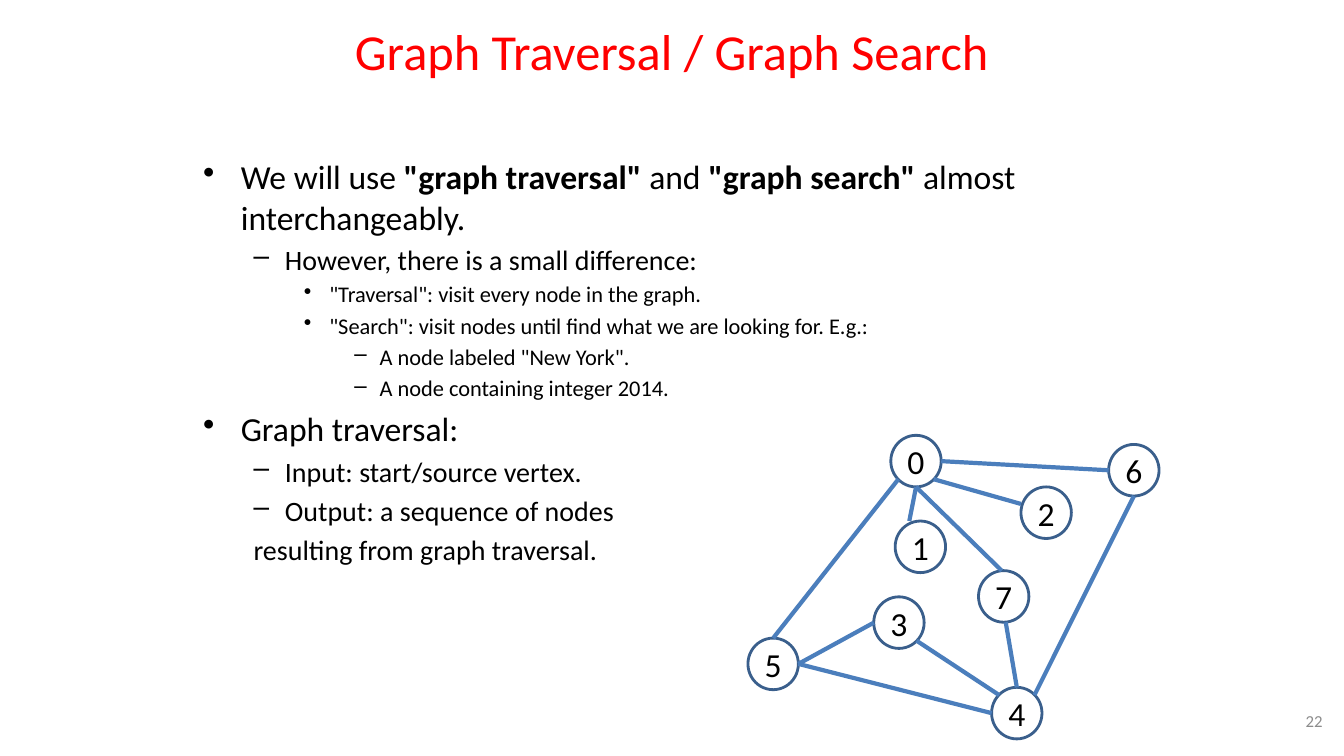
from pptx import Presentation
from pptx.dml.color import RGBColor
from pptx.enum.shapes import MSO_CONNECTOR, MSO_SHAPE
from pptx.enum.text import MSO_ANCHOR, PP_ALIGN
from pptx.oxml.xmlchemy import OxmlElement
from pptx.util import Cm, Pt

NODE_WIDTH, NODE_HEIGHT = 1.27, 1.3

# Left and top of each graph node, in cm
NODES = {
    "0": (22.45, 10.97), "1": (22.56, 13.13), "2": (25.73, 12.27), "3": (22.02, 15.04),
    "4": (24.99, 17.32), "5": (18.85, 16.08), "6": (27.94, 11.2), "7": (24.66, 14.38),
}

# Points on a node's rim, as fractions of its width and height
TOP, BOTTOM, LEFT, RIGHT = (0.5, 0), (0.5, 1), (0, 0.5), (1, 0.5)
TOP_LEFT, TOP_RIGHT = (0.15, 0.15), (0.85, 0.15)
BOTTOM_LEFT, BOTTOM_RIGHT = (0.15, 0.85), (0.85, 0.85)

EDGES = [
    ("0", RIGHT, "6", LEFT),
    ("0", BOTTOM_RIGHT, "2", (0, 0.33)),
    ("0", BOTTOM, "1", (0.28, 0)),
    ("0", BOTTOM_LEFT, "5", TOP),
    ("0", BOTTOM, "7", (0.46, 0)),
    ("5", RIGHT, "3", LEFT),
    ("5", RIGHT, "4", LEFT),
    ("3", BOTTOM_RIGHT, "4", TOP_LEFT),
    ("7", (0.54, 1), "4", TOP),
    ("6", BOTTOM, "4", TOP_RIGHT),
]

# Per outline level: font size, left margin and hanging indent in cm, bullet
LEVELS = [(24, 0.95, 0.95, "•"), (20, 2.06, 0.79, "–"),
          (16, 3.18, 0.64, "•"), (16, 4.45, 0.64, "–")]

# Level and text runs; every second run is bold
OUTLINE = [
    (0, ["We will use ", '"graph traversal"', " and ", '"graph search"',
         " almost interchangeably."]),
    (1, ["However, there is a small difference:"]),
    (2, ['"Traversal": visit every node in the graph.']),
    (2, ['"Search": visit nodes until find what we are looking for. E.g.:']),
    (3, ['A node labeled "New York".']),
    (3, ["A node containing integer 2014."]),
    (0, ["Graph traversal:"]),
    (1, ["Input: start/source vertex."]),
    (1, ["Output: a sequence of nodes"]),
]
CONTINUATION = "resulting from graph traversal."


def color(hex_value):
    return RGBColor.from_string(hex_value)


def apply(target, values):
    for name, value in values.items():
        setattr(target, name, value)


class GraphSlide:
    font_name = "Calibri"
    text_color = "000000"
    node_color = "3A5F8C"
    edge_color = "4B7EBC"

    def __init__(self, presentation):
        self.slide = presentation.slides.add_slide(presentation.slide_layouts[6])

    def add_run(self, paragraph, text, size, hex_value=text_color, bold=False):
        run = paragraph.add_run()
        run.text = text
        apply(run.font, {"name": self.font_name, "size": Pt(size), "bold": bold})
        run.font.color.rgb = color(hex_value)

    def text_frame(self, left, top, width, height, anchor=MSO_ANCHOR.TOP):
        box = self.slide.shapes.add_textbox(Cm(left), Cm(top), Cm(width), Cm(height))
        apply(box.text_frame, {"word_wrap": True, "vertical_anchor": anchor})
        return box.text_frame

    def label(self, text, place, size, hex_value, alignment):
        paragraph = self.text_frame(*place, MSO_ANCHOR.MIDDLE).paragraphs[0]
        paragraph.alignment = alignment
        self.add_run(paragraph, text, size, hex_value)

    def outline_paragraph(self, paragraph, level, texts, margin, hanging, bullet):
        size = LEVELS[level][0]
        apply(paragraph, {"level": level, "space_before": Pt(size * 0.2)})
        properties = paragraph._p.get_or_add_pPr()
        properties.set("marL", str(Cm(margin)))
        properties.set("indent", str(-Cm(hanging)))
        if bullet:
            mark = OxmlElement("a:buChar")
            mark.set("char", bullet)
        else:
            mark = OxmlElement("a:buNone")
        properties.append(mark)
        for index, text in enumerate(texts):
            self.add_run(paragraph, text, size, bold=index % 2 == 1)

    def outline(self, place):
        frame = self.text_frame(*place)
        paragraph = frame.paragraphs[0]
        for level, texts in OUTLINE:
            self.outline_paragraph(paragraph, level, texts, *LEVELS[level][1:])
            paragraph = frame.add_paragraph()
        self.outline_paragraph(paragraph, 1, [CONTINUATION], 1.27, 0, None)

    def node(self, name):
        left, top = NODES[name]
        shape = self.slide.shapes.add_shape(
            MSO_SHAPE.OVAL, Cm(left), Cm(top), Cm(NODE_WIDTH), Cm(NODE_HEIGHT))
        shape.shadow.inherit = False
        shape.fill.background()
        shape.line.color.rgb = color(self.node_color)
        shape.line.width = Pt(2)
        apply(shape.text_frame, {
            "margin_left": 0, "margin_right": 0, "margin_top": 0, "margin_bottom": 0,
            "word_wrap": False, "vertical_anchor": MSO_ANCHOR.MIDDLE})
        paragraph = shape.text_frame.paragraphs[0]
        paragraph.alignment = PP_ALIGN.CENTER
        self.add_run(paragraph, name, 24)

    def edge(self, start, start_site, end, end_site):
        points = []
        for name, (across, down) in ((start, start_site), (end, end_site)):
            left, top = NODES[name]
            points += [Cm(left + across * NODE_WIDTH), Cm(top + down * NODE_HEIGHT)]
        connector = self.slide.shapes.add_connector(MSO_CONNECTOR.STRAIGHT, *points)
        connector.line.color.rgb = color(self.edge_color)
        connector.line.width = Pt(3)
        connector._element.spPr.append(OxmlElement("a:effectLst"))


def main():
    presentation = Presentation()
    apply(presentation, {"slide_width": Cm(33.87), "slide_height": Cm(19.05)})
    graph_slide = GraphSlide(presentation)
    graph_slide.label("Graph Traversal / Graph Search", (5.5, 0, 22.86, 2.54),
                      36, "FF0000", PP_ALIGN.CENTER)
    graph_slide.outline((4.87, 3.81, 22.45, 12.27))
    graph_slide.label("22", (25.68, 17.65, 7.9, 1.02), 12, "8C8C8C", PP_ALIGN.RIGHT)
    for name in NODES:
        graph_slide.node(name)
    for edge in EDGES:
        graph_slide.edge(*edge)
    presentation.save("out.pptx")


if __name__ == "__main__":
    main()
